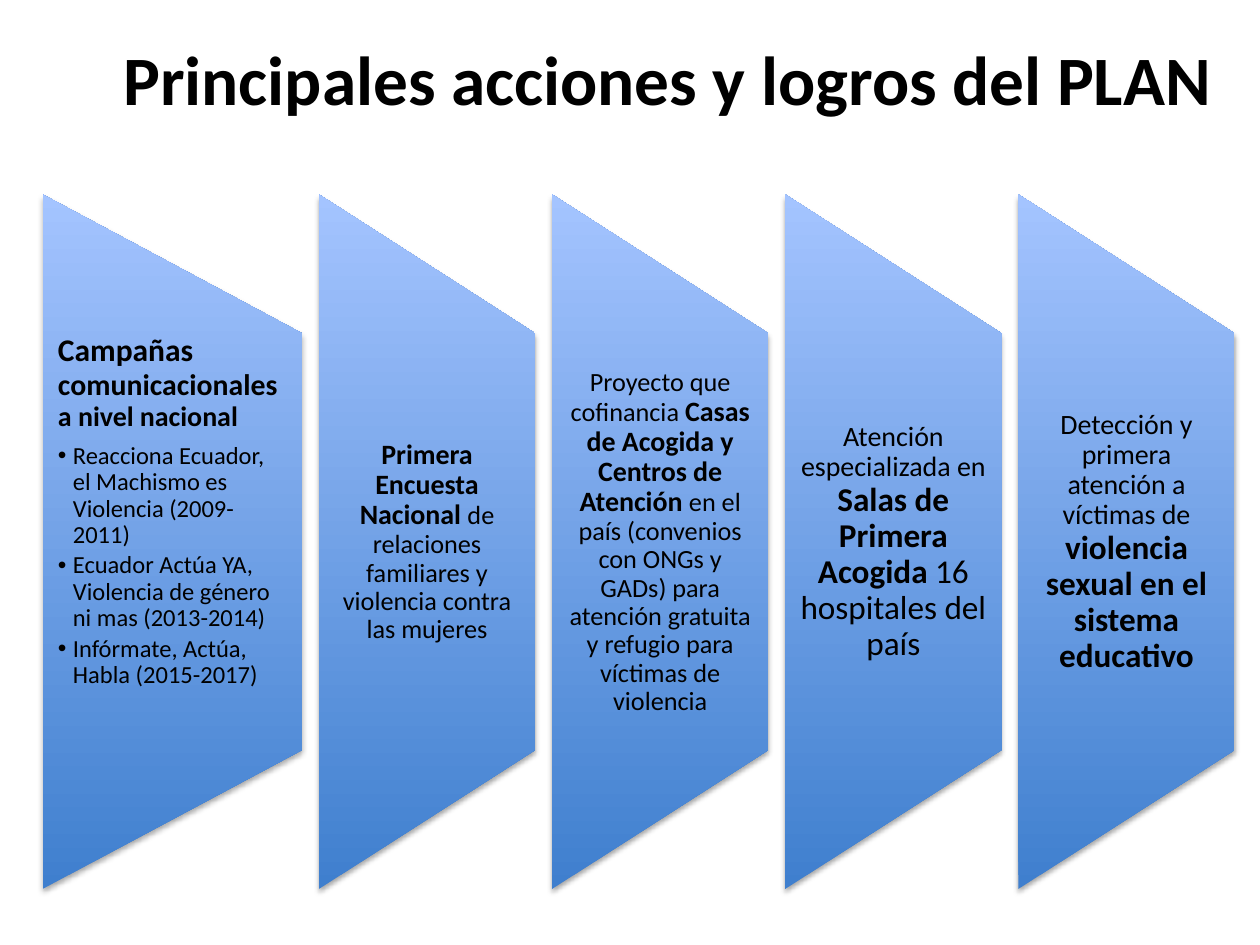
from dataclasses import dataclass

from lxml.etree import SubElement
from pptx import Presentation
from pptx.dml.color import RGBColor
from pptx.enum.shapes import MSO_SHAPE as Shape
from pptx.enum.text import MSO_ANCHOR as Anchor, PP_ALIGN as Align
from pptx.oxml import parse_xml
from pptx.oxml.ns import nsdecls, qn
from pptx.slide import Slide
from pptx.text.text import _Paragraph as Paragraph
from pptx.util import Cm, Pt

BLACK = RGBColor(0x00, 0x00, 0x00)
DEEP_BLUE = RGBColor(0x3F, 0x7F, 0xCE)
PALE_BLUE = RGBColor(0xA4, 0xC4, 0xFF)

PANEL_TOP, PANEL_HEIGHT = 3.92, 14.0
TEXT_TOP, TEXT_HEIGHT = 6.73, 8.41
FIRST_LEFT, GAP = 0.86, 0.34
BULLET_INDENT = Cm(0.3)

SHADOW = (
    f'<a:effectLst {nsdecls("a")}><a:outerShdw blurRad="{Pt(3.1)}" dist="{Pt(1.8)}" '
    'dir="5400000" rotWithShape="0"><a:srgbClr val="000000"><a:alpha val="35000"/>'
    '</a:srgbClr></a:outerShdw></a:effectLst>'
)


@dataclass(frozen=True)
class Run:
    text: str
    size: float
    bold: bool = False


@dataclass(frozen=True)
class Panel:
    runs: tuple[Run, ...]
    bullets: tuple[str, ...] = ()
    width: float = 4.36
    inset: float = 0.28


PANELS = (
    Panel(
        (Run("Campañas ", 18, True), Run("comunicacionales", 17, True),
         Run(" ", 18, True), Run("a nivel nacional", 16, True)),
        ("Reacciona Ecuador, el Machismo es Violencia (2009-2011)",
         "Ecuador Actúa YA, Violencia de género ni mas (2013-2014)",
         "Infórmate, Actúa, Habla (2015-2017)"),
        width=5.23, inset=0.31,
    ),
    Panel((Run("Primera Encuesta Nacional ", 16, True),
           Run("de relaciones familiares y violencia contra las mujeres", 15))),
    Panel(
        (Run("Proyecto que cofinancia ", 15),
         Run("Casas de Acogida y Centros de Atención ", 16, True),
         Run("en el país (convenios con ONGs y GADs) para atención gratuita "
             "y refugio para víctimas de violencia", 15)),
        inset=0.26,
    ),
    Panel((Run("Atención especializada en ", 16),
           Run("Salas de Primera Acogida ", 19, True),
           Run("16 hospitales del país", 19))),
    Panel((Run("Detección y primera atención a víctimas de ", 16),
           Run("violencia sexual en el sistema educativo", 19, True))),
)


def add_runs(paragraph: Paragraph, runs: tuple[Run, ...]) -> None:
    for item in runs:
        run = paragraph.add_run()
        run.text = item.text
        font_format = {"name": "Calibri", "size": Pt(item.size), "bold": item.bold}
        for attribute, value in font_format.items():
            setattr(run.font, attribute, value)
        run.font.color.rgb = BLACK


def add_bullet(paragraph: Paragraph, text: str) -> None:
    paragraph.level = 1
    paragraph.line_spacing = 0.9
    paragraph.space_after = Pt(2.1)
    properties = paragraph._p.get_or_add_pPr()
    properties.set("marL", str(BULLET_INDENT))
    properties.set("indent", str(-BULLET_INDENT))
    SubElement(properties, qn("a:buFont")).set("typeface", "Arial")
    SubElement(properties, qn("a:buChar")).set("char", "•")
    add_runs(paragraph, (Run(text, 14),))


def draw_blade(slide: Slide, left: float, width: float) -> None:
    """Draw the slanted panel: a manual operation symbol turned on its side."""
    shift = (PANEL_HEIGHT - width) / 2
    blade = slide.shapes.add_shape(
        Shape.FLOWCHART_MANUAL_OPERATION, Cm(left - shift), Cm(PANEL_TOP + shift),
        Cm(PANEL_HEIGHT), Cm(width))
    blade.rotation = 270
    blade.line.fill.background()
    blade.fill.gradient()
    blade.fill.gradient_angle = 90
    for stop, position, color in zip(
            blade.fill.gradient_stops, (0, 1), (DEEP_BLUE, PALE_BLUE)):
        stop.position = position
        stop.color.rgb = color
    properties = blade._element.spPr
    properties.find(qn("a:gradFill")).set("rotWithShape", "0")
    properties.append(parse_xml(SHADOW))


def draw_panel_text(slide: Slide, left: float, panel: Panel) -> None:
    frame = slide.shapes.add_textbox(
        Cm(left), Cm(TEXT_TOP), Cm(panel.width), Cm(TEXT_HEIGHT)).text_frame
    frame_format = {
        "word_wrap": True,
        "vertical_anchor": Anchor.TOP if panel.bullets else Anchor.MIDDLE,
        "margin_left": Cm(panel.inset), "margin_right": Cm(panel.inset),
        "margin_top": 0, "margin_bottom": 0,
    }
    for attribute, value in frame_format.items():
        setattr(frame, attribute, value)
    lead = frame.paragraphs[0]
    lead.line_spacing = 0.9
    if panel.bullets:
        lead.space_after = Pt(6.3)
    else:
        lead.alignment = Align.CENTER
    add_runs(lead, panel.runs)
    for text in panel.bullets:
        add_bullet(frame.add_paragraph(), text)


def main() -> None:
    deck = Presentation()
    deck.slide_width, deck.slide_height = Cm(25.4), Cm(19.05)
    slide = deck.slides.add_slide(deck.slide_layouts[5])

    title = slide.shapes.title
    title_box = {"left": Cm(1.83), "top": Cm(0.33), "width": Cm(22.86), "height": Cm(2.46)}
    for attribute, value in title_box.items():
        setattr(title, attribute, value)
    title.text_frame.vertical_anchor = Anchor.MIDDLE
    heading = title.text_frame.paragraphs[0]
    heading.alignment = Align.RIGHT
    add_runs(heading, (Run("Principales acciones y logros del PLAN", 39.6, True),))

    left = FIRST_LEFT
    for panel in PANELS:
        draw_blade(slide, left, panel.width)
        draw_panel_text(slide, left, panel)
        left += panel.width + GAP

    deck.save("out.pptx")


if __name__ == "__main__":
    main()
